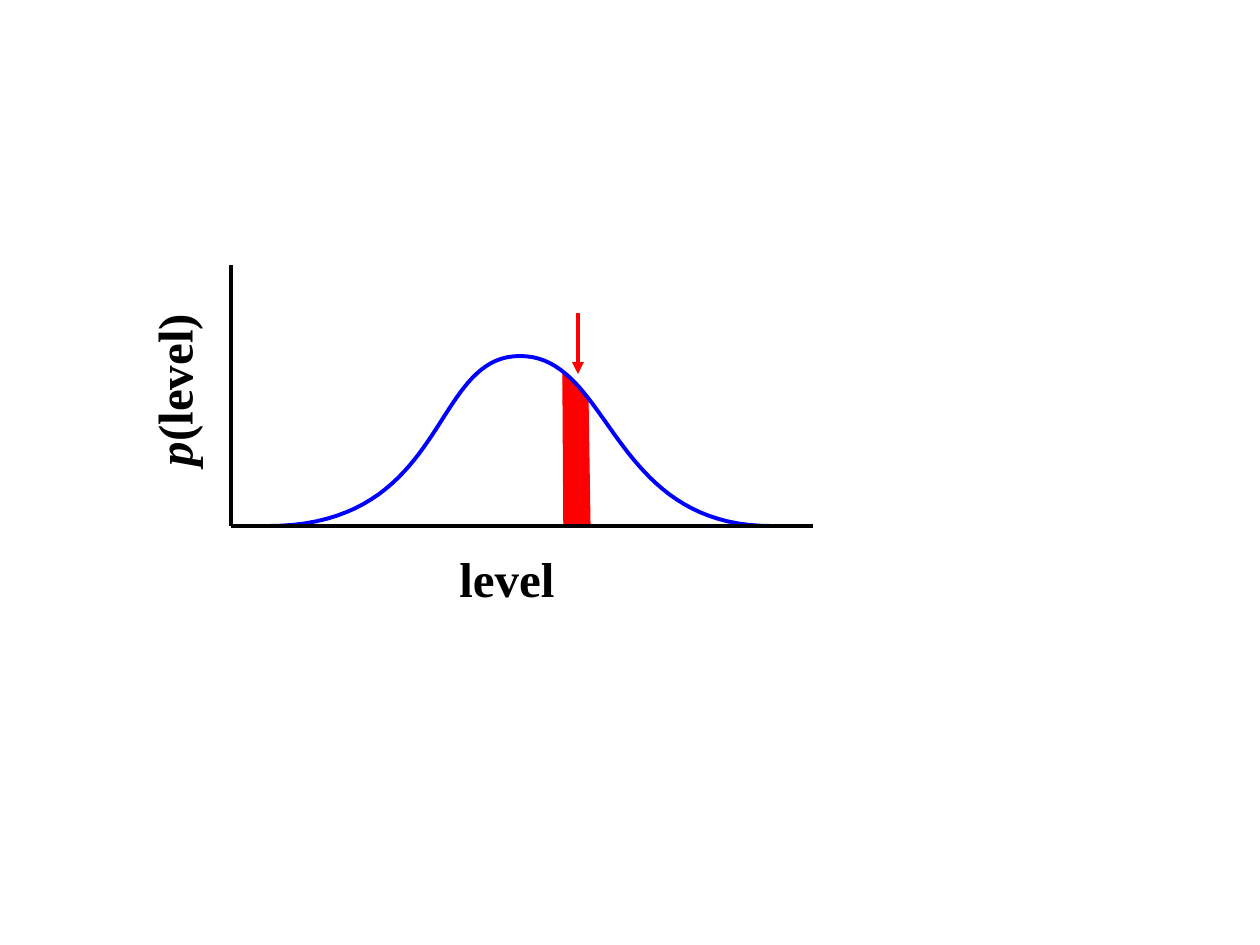
import pptx
import pptx.dml.color
import pptx.enum.shapes
import pptx.enum.text
import pptx.oxml
import pptx.oxml.ns
import pptx.util

SCALE = pptx.util.Inches(1) / 126
BLACK, RED, BLUE = "000000", "FF0000", "0000FF"


def emu(px):
    return pptx.util.Emu(round(px * SCALE))


def color(value):
    return pptx.dml.color.RGBColor.from_string(value)


def bezier(start, first, second, end, steps=40):
    for step in range(steps + 1):
        t = step / steps
        weights = ((1 - t) ** 3, 3 * t * (1 - t) ** 2, 3 * t**2 * (1 - t), t**3)
        yield tuple(
            sum(weight * value for weight, value in zip(weights, values))
            for values in zip(start, first, second, end)
        )


class Diagram:
    """Draws styled elements on the current page."""

    font = {"name": "Times New Roman", "size": pptx.util.Pt(28), "bold": True}
    frame = {"word_wrap": False, "auto_size": pptx.enum.text.MSO_AUTO_SIZE.SHAPE_TO_FIT_TEXT}
    weight = 2.25

    def __init__(self, page):
        self.page = page

    def outline(self, shape, value, weight):
        shape.line.color.rgb = color(value)
        shape.line.width = pptx.util.Pt(weight)

    def line(self, start, end, value, arrow=False, parent=None):
        shapes = (parent or self.page).shapes
        kind = pptx.enum.shapes.MSO_CONNECTOR.STRAIGHT
        connector = shapes.add_connector(kind, *map(emu, (*start, *end)))
        self.outline(connector, value, self.weight)
        properties = connector._element.spPr
        if arrow:
            head = pptx.oxml.parse_xml(
                f'<a:tailEnd {pptx.oxml.ns.nsdecls("a")} type="triangle"/>'
            )
            connector.line._get_or_add_ln().append(head)
        properties.append(pptx.oxml.parse_xml(f'<a:effectLst {pptx.oxml.ns.nsdecls("a")}/>'))

    def freeform(self, points, value, weight, filled=False):
        start, *rest = [(emu(x), emu(y)) for x, y in points]
        builder = self.page.shapes.build_freeform(*start)
        builder.add_line_segments(rest, close=filled)
        shape = builder.convert_to_shape()
        shape.shadow.inherit = False
        if filled:
            shape.fill.solid()
            shape.fill.fore_color.rgb = color(value)
        else:
            shape.fill.background()
        self.outline(shape, value, weight)

    def label(self, bounds, spans, rotation=0):
        box = self.page.shapes.add_textbox(*map(emu, bounds))
        box.rotation = rotation
        for name, value in self.frame.items():
            setattr(box.text_frame, name, value)
        para = box.text_frame.paragraphs[0]
        for text, italic in spans:
            span = para.add_run()
            span.text = text
            for name, value in {**self.font, "italic": italic}.items():
                setattr(span.font, name, value)
            span.font.color.rgb = color(BLACK)


def main():
    deck = pptx.Presentation()
    deck.slide_width, deck.slide_height = emu(1260), emu(945)
    page = deck.slides.add_slide(deck.slide_layouts[6])
    diagram = Diagram(page)

    base, peak = 526, (520, 356)
    origin = (231, base)
    diagram.freeform(
        [(563, 373), (564, base), (590, base), (588, 396)], RED, 0.75, filled=True
    )
    right = bezier((771, base), (610, base), (611, peak[1]), peak)
    left = bezier(peak, (430, peak[1]), (449, base), (268, base))
    diagram.freeform([*right, *list(left)[1:]], BLUE, diagram.weight)

    axes = page.shapes.add_group_shape()
    for start, end in (((231, 265), origin), (origin, (813, base))):
        diagram.line(start, end, BLACK, parent=axes)

    diagram.label((84, 353, 179, 72), [("p", True), ("(level)", False)], rotation=270)
    diagram.label((447, 542, 121, 72), [("level", False)])
    diagram.line((578, 313), (578, 374), RED, arrow=True)
    deck.save("out.pptx")


if __name__ == "__main__":
    main()
